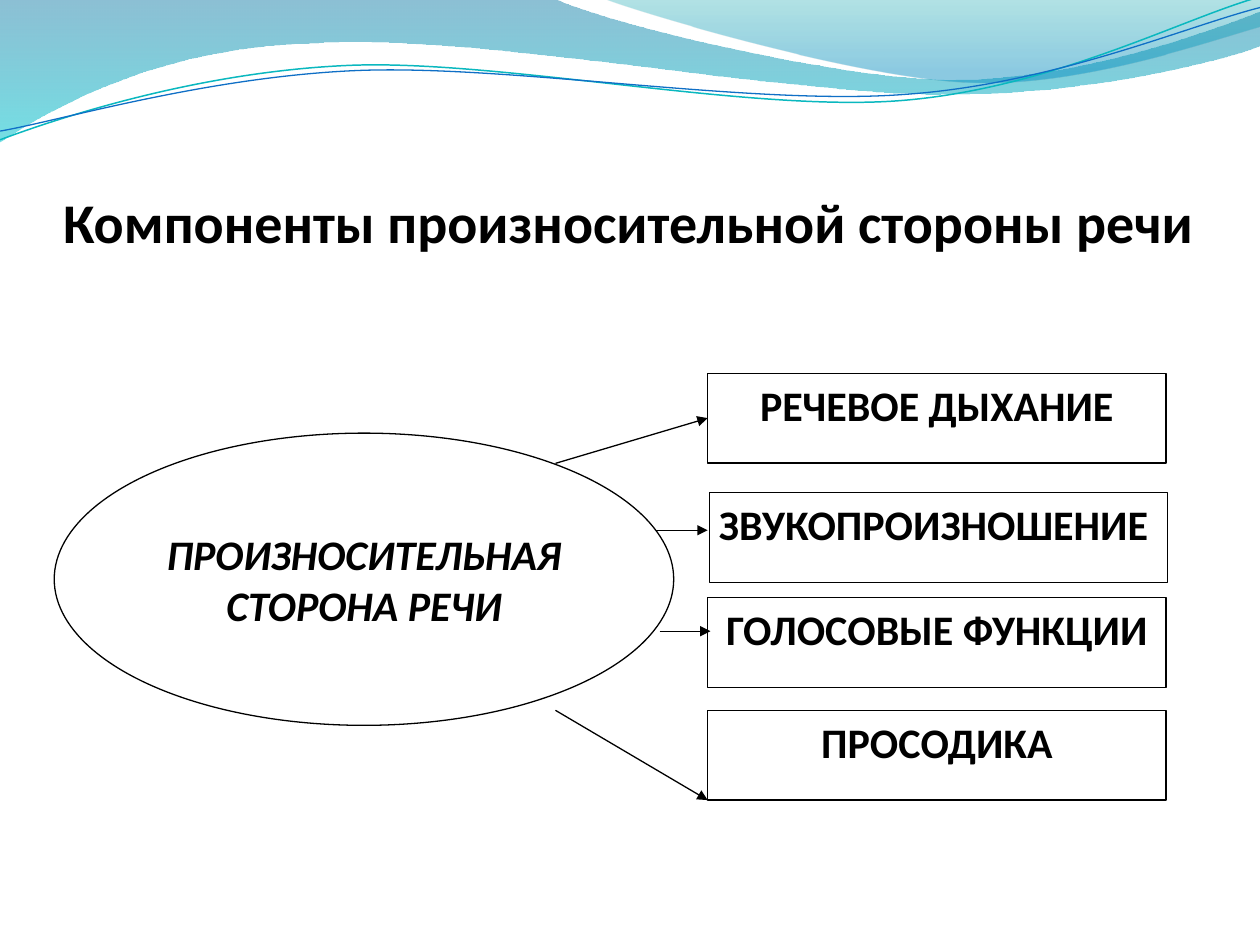
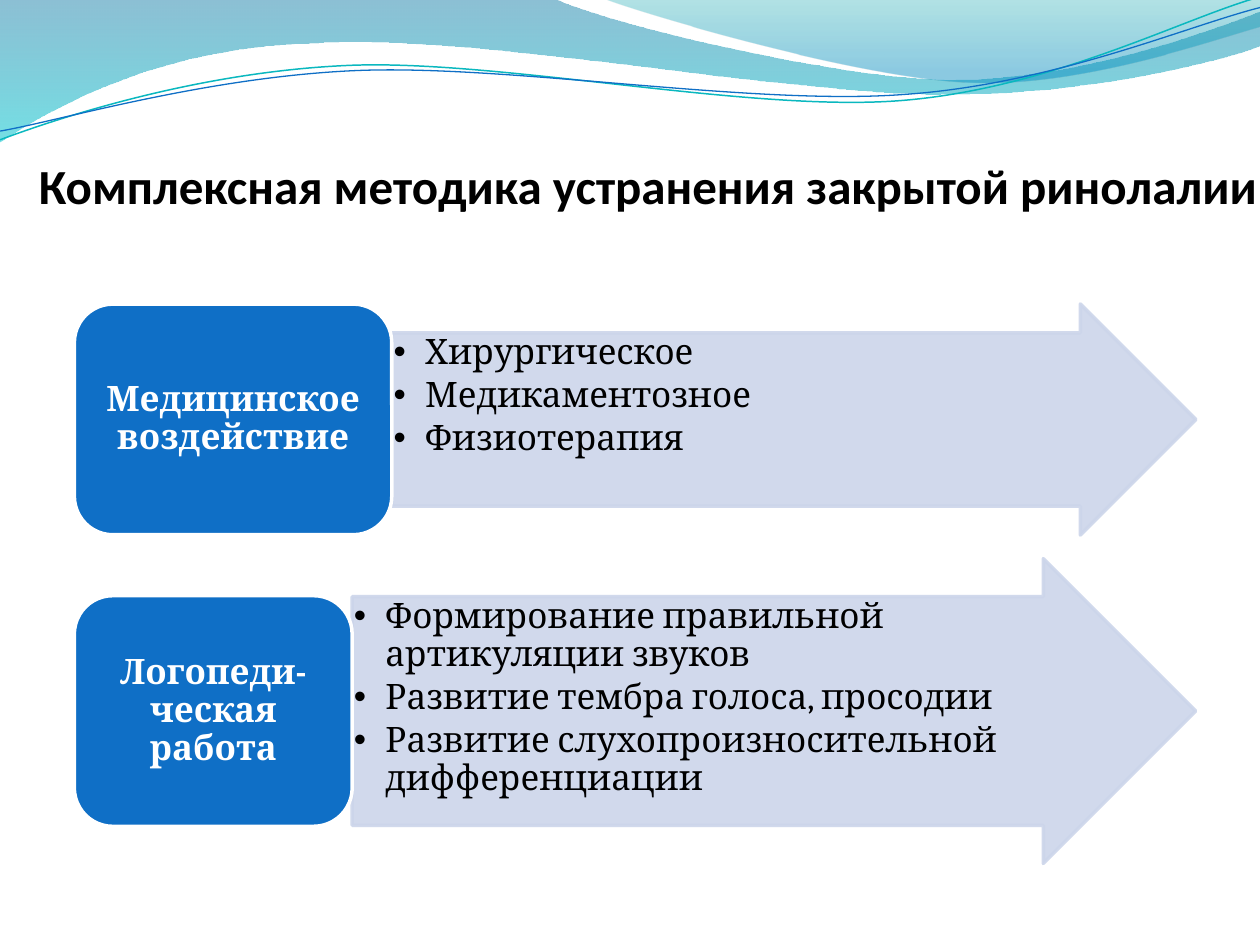
from dataclasses import dataclass

from lxml.etree import SubElement
from pptx import Presentation
from pptx.dml.color import RGBColor
from pptx.enum.shapes import MSO_CONNECTOR as Connector
from pptx.enum.shapes import MSO_SHAPE as Preset
from pptx.enum.text import MSO_ANCHOR as Anchor
from pptx.enum.text import MSO_AUTO_SIZE as AutoSize
from pptx.enum.text import PP_ALIGN as Align
from pptx.oxml.ns import qn
from pptx.util import Pt


@dataclass(frozen=True)
class Theme:
    black: str = "000000"
    white: str = "FFFFFF"
    blue: str = "0F6FC6"
    teal: str = "0AB8BF"
    pale: str = "CCD5EA"
    # Each gradient stop: position, colour, opacity in percent
    wide_band: tuple = ((0, "0074A1", 45), (1, "00C6CF", 55))
    right_band: tuple = ((0, "00A1A9", 30), (0.8, "008BBF", 45))
    sans: str = "Calibri"
    serif: str = "Cambria"
    heading: int = 32
    small_heading: int = 28
    label: int = 24
    body: int = 20
    thin: float = 0.75
    thick: float = 2


# Outlines in points: pairs are straight steps, sixes are cubic curves
WIDE_BAND = [
    (0, 0), (316.8, -0.7),
    (342.7, 12.2, 478.1, 45.4, 545.8, 45.4),
    (614.2, 45.4, 689.8, 18.7, 720, 6.5),
    (720.7, 25.9),
    (707.8, 31.7, 626.4, 54.7, 537.1, 54),
    (447.8, 54, 275, 20.2, 185, 24.5),
    (92.9, 25.9, 33.1, 59.8, -0.7, 81.4),
]
RIGHT_BAND = [
    (344.9, -0.7),
    (366.5, 7.9, 491, 44.6, 553.7, 46.8),
    (616.3, 49.7, 691.9, 23, 720, 15.1),
    (720, 0),
]
TEAL_WAVE = [
    (0, 79.9),
    (34.6, 67, 113.8, 41, 199.4, 37.4),
    (284.4, 33.8, 427, 64.1, 513.4, 57.6),
    (599.8, 51.1, 675.4, 10.8, 718.6, -1.4),
]
BLUE_WAVE = [
    (0, 74.9),
    (33.8, 69.1, 118.1, 43.9, 203.8, 40.3),
    (290.2, 36.7, 429.8, 60.5, 516.2, 54),
    (601.9, 48.2, 677.5, 15.1, 720, 4.3),
]


def rgb(value):
    return RGBColor.from_string(value)


def bend(shape, outline):
    """Join the three steps of each six-number segment into one cubic curve."""
    outline_path = next(shape.element.spPr.iter(qn("a:path")))
    steps = iter(outline_path.findall(qn("a:lnTo")))
    for segment in outline[1:]:
        step = next(steps)
        if len(segment) == 6:
            step.tag = qn("a:cubicBezTo")
            for extra in (next(steps), next(steps)):
                step.append(extra[0])
                outline_path.remove(extra)


def set_opacity(shape, *percents):
    """Give each colour of the shape's fill and line its opacity, in order."""
    colors = shape.element.spPr.iter(qn("a:srgbClr"))
    for color, percent in zip(colors, percents):
        SubElement(color, qn("a:alpha")).set("val", str(percent * 1000))


def add_bullet(paragraph, indent=18):
    properties = paragraph._p.get_or_add_pPr()
    properties.set("marL", str(Pt(indent)))
    properties.set("indent", str(-Pt(indent)))
    SubElement(properties, qn("a:buFont")).set("typeface", "Arial")
    SubElement(properties, qn("a:buChar")).set("char", "•")


def write(frame, *lines, font, size, color, bold=False, italic=False, align=Align.CENTER,
          anchor=Anchor.TOP, margins=(7.2, 3.6, 7.2, 3.6), spacing=None, after=0, bullet=False):
    """Fill a text frame, one paragraph a line; margins run left, top, right, bottom."""
    frame.word_wrap = True
    frame.auto_size = AutoSize.NONE
    frame.vertical_anchor = anchor
    (frame.margin_left, frame.margin_top,
     frame.margin_right, frame.margin_bottom) = map(Pt, margins)
    for index, line in enumerate(lines):
        paragraph = frame.add_paragraph() if index else frame.paragraphs[0]
        paragraph.alignment = align
        paragraph.space_after = Pt(after)
        if spacing:
            paragraph.line_spacing = spacing
        if bullet:
            add_bullet(paragraph)
        run = paragraph.add_run()
        run.text = line
        run.font.name, run.font.size = font, Pt(size)
        run.font.bold, run.font.italic = bold, italic
        run.font.color.rgb = rgb(color)


class Deck:
    def __init__(self, theme):
        self.theme = theme
        self.presentation = Presentation()
        self.presentation.slide_width, self.presentation.slide_height = Pt(720), Pt(540)
        self.layout = self.presentation.slide_layouts[5]
        self.slide = None

    def new_slide(self):
        self.slide = self.presentation.slides.add_slide(self.layout)

    def title(self, text, left, top, width, height, size, align):
        title = self.slide.shapes.title
        title.left, title.top, title.width, title.height = map(Pt, (left, top, width, height))
        write(title.text_frame, text, font=self.theme.sans, size=size, color=self.theme.black,
              bold=True, align=align, anchor=Anchor.BOTTOM, margins=(0, 3.6, 0, 0))

    def shape(self, preset, left, top, width, height, fill, line, weight):
        shape = self.slide.shapes.add_shape(preset, *map(Pt, (left, top, width, height)))
        shape.shadow.inherit = False
        shape.fill.solid()
        shape.fill.fore_color.rgb = rgb(fill)
        shape.line.color.rgb = rgb(line)
        shape.line.width = Pt(weight)
        return shape

    def outlined(self, preset, *box):
        return self.shape(preset, *box, self.theme.white, self.theme.black, self.theme.thin)

    def arrow(self, start, end, target=None):
        connector = self.slide.shapes.add_connector(
            Connector.STRAIGHT, *map(Pt, (*start, *end)))
        if target is not None:
            connector.end_connect(target, 1)
        connector.line.color.rgb = rgb(self.theme.black)
        connector.line.width = Pt(self.theme.thin)
        SubElement(connector.line._get_or_add_ln(), qn("a:tailEnd")).set("type", "triangle")
        SubElement(connector.element.spPr, qn("a:effectLst"))

    def freeform(self, outline, close):
        start, *rest = [(Pt(x), Pt(y)) for segment in outline
                        for x, y in zip(segment[::2], segment[1::2])]
        builder = self.slide.shapes.build_freeform(*start)
        builder.add_line_segments(rest, close=close)
        shape = builder.convert_to_shape()
        bend(shape, outline)
        shape.shadow.inherit = False
        return shape

    def band(self, outline, stops):
        shape = self.freeform(outline, close=True)
        shape.line.fill.background()
        shape.fill.gradient()
        shape.fill.gradient_angle = 270
        for stop, (position, color, _) in zip(shape.fill.gradient_stops, stops):
            stop.position = position
            stop.color.rgb = rgb(color)
        set_opacity(shape, *(opacity for _, _, opacity in stops))
        return shape

    def wave(self, outline, color, weight):
        shape = self.freeform(outline, close=False)
        shape.fill.background()
        shape.line.color.rgb = rgb(color)
        shape.line.width = Pt(weight)
        return shape

    def decorate_layout(self):
        """Draw the bands and waves and place them behind all on the shared layout."""
        theme = self.theme
        decorations = [
            self.band(WIDE_BAND, theme.wide_band),
            self.band(RIGHT_BAND, theme.right_band),
            self.wave(TEAL_WAVE, theme.teal, 0.85),
            self.wave(BLUE_WAVE, theme.blue, theme.thin),
        ]
        for index, shape in enumerate(decorations, start=2):
            self.layout.shapes.element.insert(index, shape.element)


def components_slide(deck):
    theme = deck.theme
    label = dict(font=theme.sans, size=theme.label, color=theme.black, bold=True)
    deck.title("Компоненты произносительной стороны речи", 36, 55.5, 654, 90,
               theme.heading, Align.LEFT)

    # Whole: the pronunciation side of speech
    whole = deck.outlined(Preset.OVAL, 31, 247.5, 354, 167)
    write(whole.text_frame, "ПРОИЗНОСИТЕЛЬНАЯ СТОРОНА РЕЧИ", italic=True,
          margins=(7.2, 30.2, 7.2, 3.6), **label)

    # Components: name, left, top, left margin
    components = [
        ("РЕЧЕВОЕ ДЫХАНИЕ", 404.4, 213.3, 7.2),
        ("ЗВУКОПРОИЗНОШЕНИЕ", 405.4, 281.5, 1.4),
        ("ГОЛОСОВЫЕ ФУНКЦИИ", 404.4, 341.5, 7.2),
        ("ПРОСОДИКА", 404.4, 405.9, 7.2),
    ]
    boxes = []
    for name, left, top, margin in components:
        box = deck.outlined(Preset.RECTANGLE, left, top, 261.9, 51.3)
        write(box.text_frame, name, margins=(margin, 3.6, 7.2, 3.6), **label)
        boxes.append(box)

    # Arrows from the whole to its components
    deck.arrow((375, 303), (404.4, 303))
    deck.arrow((377, 360.7), (406, 360.7))
    deck.arrow((317.4, 264.8), (404.4, 239), target=boxes[0])
    deck.arrow((317.4, 405.9), (404.4, 457.2))


def method_slide(deck):
    theme = deck.theme
    deck.title("Комплексная методика устранения закрытой ринолалии", 20, 71.5, 700, 51,
               theme.small_heading, Align.CENTER)

    # Stages: name, tile top and width, arrow height, points
    stages = [
        ("Медицинское воздействие", 173.8, 181.4, 132,
         ["Хирургическое", "Медикаментозное", "Физиотерапия"]),
        ("Логопеди-ческая работа", 340.4, 158.8, 174.2,
         ["Формирование правильной артикуляции звуков",
          "Развитие тембра голоса, просодии",
          "Развитие слухопроизносительной дифференциации"]),
    ]
    tile_left, tile_height, arrow_right = 42.5, 131.8, 683.3
    text = dict(font=theme.serif, size=theme.body, spacing=0.9)
    for name, top, width, arrow_height, points in stages:
        arrow_left = tile_left + width
        arrow_top = top + (tile_height - arrow_height) / 2
        arrow = deck.shape(Preset.RIGHT_ARROW, arrow_left, arrow_top, arrow_right - arrow_left,
                           arrow_height, theme.pale, theme.pale, theme.thick)
        arrow.adjustments[0], arrow.adjustments[1] = 0.75, 0.5
        set_opacity(arrow, 90, 90)
        write(arrow.text_frame, *points, color=theme.black, align=Align.LEFT,
              margins=(1, 1, 1, 1), after=3, bullet=True, **text)

        tile = deck.shape(Preset.ROUNDED_RECTANGLE, tile_left, top, width, tile_height,
                          theme.blue, theme.white, theme.thick)
        write(tile.text_frame, name, color=theme.white, bold=True, anchor=Anchor.MIDDLE,
              margins=(6, 3, 6, 3), **text)


def main():
    deck = Deck(Theme())
    deck.new_slide()
    deck.decorate_layout()
    components_slide(deck)
    deck.new_slide()
    method_slide(deck)
    deck.presentation.save("out.pptx")


if __name__ == "__main__":
    main()
